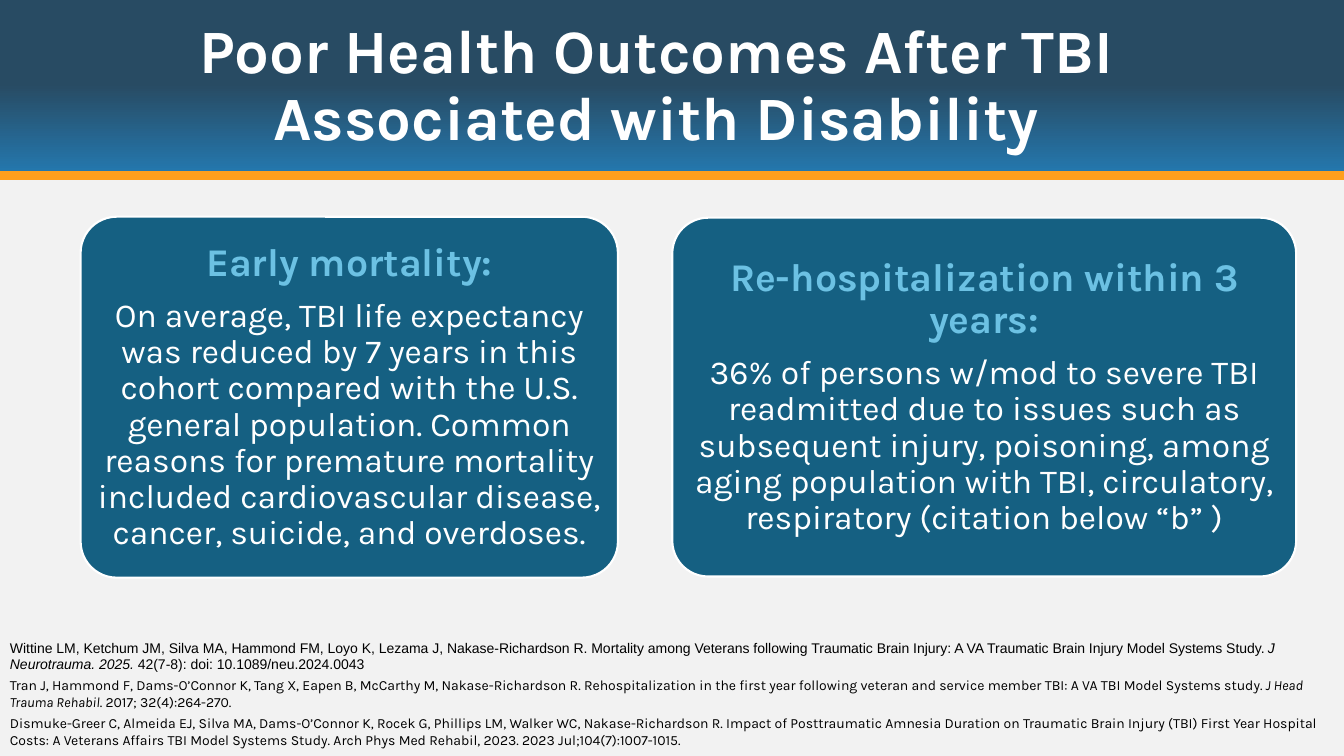
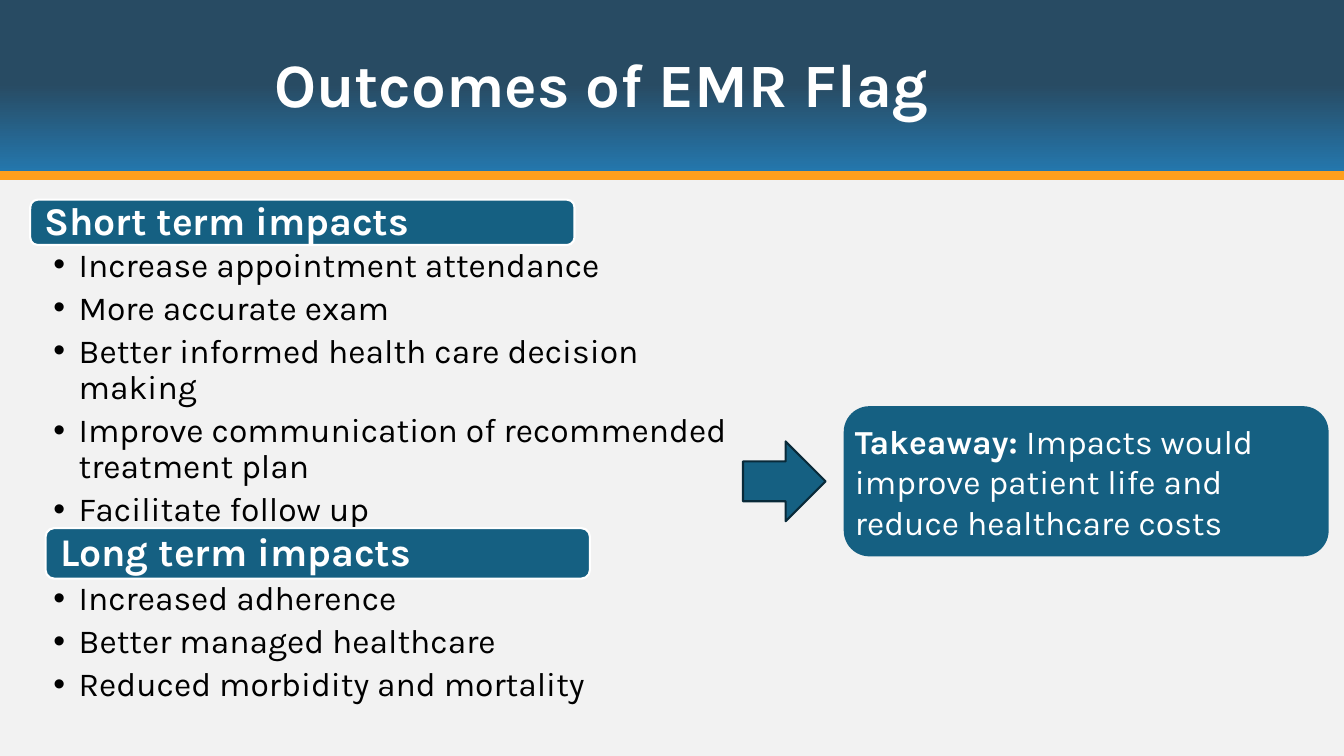
from dataclasses import dataclass

import lxml.etree
import pptx
import pptx.dml.color
import pptx.enum.shapes
import pptx.enum.text
import pptx.oxml.ns
import pptx.util

Pt = pptx.util.Pt
Color = pptx.dml.color.RGBColor.from_string
Shape = pptx.enum.shapes.MSO_SHAPE
Align = pptx.enum.text.PP_ALIGN
Anchor = pptx.enum.text.MSO_ANCHOR
qn = pptx.oxml.ns.qn


@dataclass(frozen=True)
class Theme:
    """Colours, fonts and sizes that the slides share."""
    width: float = 960
    height: float = 540
    band_height: float = 125.3
    rule_weight: float = 6
    outline: float = 1.5
    line_spacing: float = 0.9
    font: str = "Karla"
    plain_font: str = "Arial"
    title_size: float = 44
    heading_size: float = 28
    body_size: float = 24
    reference_size: float = 10
    paper = Color("F2F2F2")
    band_top = Color("284B63")
    band_bottom = Color("2479B0")
    rule = Color("FF9F1C")
    panel = Color("156082")
    panel_heading = Color("6CC1E3")
    arrow_edge = Color("092A39")
    light = Color("FFFFFF")
    dark = Color("000000")


THEME = Theme()

CARDS = [
    ((57.6, 154.8, 383.8, 257.8), "Early mortality:",
     "On average, TBI life expectancy was reduced by 7 years in this cohort compared "
     "with the U.S. general population. Common reasons for premature mortality included "
     "cardiovascular disease, cancer, suicide, and overdoses."),
    ((480.2, 155.5, 445.7, 256.3), "Re-hospitalization within 3 years:",
     "36% of persons w/mod to severe TBI readmitted due to issues such as subsequent "
     "injury, poisoning, among aging population with TBI, circulatory, respiratory "
     "(citation below “b” )"),
]

REFERENCES = [
    (THEME.plain_font, [
        ("Wittine LM, Ketchum JM, Silva MA, Hammond FM, Loyo K, Lezama J, "
         "Nakase-Richardson R. Mortality among Veterans following Traumatic Brain Injury: "
         "A VA Traumatic Brain Injury Model Systems Study. ", {}),
        ("J Neurotrauma. 2025. ", {"italic": True}),
        ("42(7-8): doi: 10.1089/neu.2024.0043", {})]),
    (THEME.font, [
        ("Tran J, Hammond F, Dams-O’Connor K, Tang X, Eapen B, McCarthy M, "
         "Nakase-Richardson R. Rehospitalization in the first year following veteran and "
         "service member TBI: A VA TBI Model Systems study. ", {}),
        ("J Head Trauma Rehabil", {"italic": True}),
        (". 2017; 32(4):264-270.", {})]),
    (THEME.font, [
        ("Dismuke-Greer C, Almeida EJ, Silva MA, Dams-O’Connor K, Rocek G, Phillips LM, "
         "Walker WC, Nakase-Richardson R. Impact of Posttraumatic Amnesia Duration on "
         "Traumatic Brain Injury (TBI) First Year Hospital Costs: A Veterans Affairs TBI "
         "Model Systems Study. Arch Phys Med Rehabil, 2023. 2023 Jul;104(7):1007-1015.", {})]),
]

SHORT_TERM = ["Increase appointment attendance", "More accurate exam",
              "Better informed health care decision making",
              "Improve communication of recommended treatment plan", "Facilitate follow up"]
LONG_TERM = ["Increased adherence", "Better managed healthcare",
             "Reduced morbidity and mortality"]


def points(box):
    """Turn a (left, top, width, height) box into point lengths."""
    return [Pt(length) for length in box]


def set_frame(shape, insets, anchor):
    """Wrap the text of a shape and set its (horizontal, vertical) insets and anchor."""
    frame = shape.text_frame
    frame.word_wrap = True
    frame.margin_left = frame.margin_right = Pt(insets[0])
    frame.margin_top = frame.margin_bottom = Pt(insets[1])
    frame.vertical_anchor = anchor
    return frame


def add_text(page, box, insets=(7.2, 3.6), anchor=Anchor.TOP):
    """Add a text box and return its frame."""
    return set_frame(page.shapes.add_textbox(*points(box)), insets, anchor)


def add_panel(page, kind, box, edge):
    """Add a filled shape in the panel colour."""
    panel = page.shapes.add_shape(kind, *points(box))
    panel.shadow.inherit = False
    panel.fill.solid()
    panel.fill.fore_color.rgb = THEME.panel
    panel.line.color.rgb = edge
    panel.line.width = Pt(THEME.outline)
    return panel


def next_paragraph(frame, index):
    """Return the first paragraph of a frame or append another."""
    return frame.add_paragraph() if index else frame.paragraphs[0]


def write(para, spans, size, color, bold=False, align=Align.LEFT,
          spacing=THEME.line_spacing, font=THEME.font):
    """Write spans of (text, own font settings) in one paragraph style."""
    para.alignment = align
    para.line_spacing = spacing
    para.font.name = font
    para.font.size = Pt(size)
    para.font.bold = bold
    para.font.color.rgb = color
    for text, settings in spans:
        span = para.add_run()
        span.text = text
        for name, value in settings.items():
            setattr(span.font, name, value)


def add_bullet(para, indent):
    """Give a paragraph a hanging round bullet."""
    properties = para._p.get_or_add_pPr()
    properties.set("marL", str(Pt(indent)))
    properties.set("indent", str(-Pt(indent)))
    lxml.etree.SubElement(properties, qn("a:buFont"), typeface=THEME.plain_font)
    lxml.etree.SubElement(properties, qn("a:buChar"), char="•")


def add_page(deck, title, title_box):
    """Add a slide with the title band and its rule."""
    page = deck.slides.add_slide(deck.slide_layouts[6])
    page.background.fill.solid()
    page.background.fill.fore_color.rgb = THEME.paper

    band = add_panel(page, Shape.RECTANGLE, (0, 0, THEME.width, THEME.band_height), THEME.panel)
    band.line.fill.background()
    band.fill.gradient()
    band.fill.gradient_angle = 270
    stops = [(0.48, THEME.band_top), (1, THEME.band_bottom)]
    for stop, (position, color) in zip(band.fill.gradient_stops, stops):
        stop.position = position
        stop.color.rgb = color

    rule = page.shapes.add_connector(
        pptx.enum.shapes.MSO_CONNECTOR.STRAIGHT,
        *points((0, THEME.band_height, THEME.width, THEME.band_height)))
    rule.line.color.rgb = THEME.rule
    rule.line.width = Pt(THEME.rule_weight)
    lxml.etree.SubElement(rule._element.spPr, qn("a:effectLst"))

    frame = add_text(page, title_box, anchor=Anchor.MIDDLE)
    write(frame.paragraphs[0], [(title, {})], THEME.title_size, THEME.light, True, Align.CENTER)
    return page


def add_card(page, box, heading, body):
    """Add a rounded card with a heading over centred text."""
    card = add_panel(page, Shape.ROUNDED_RECTANGLE, box, THEME.light)
    card.adjustments[0] = 0.1
    frame = set_frame(card, (4.3, 2.9), Anchor.MIDDLE)
    write(frame.paragraphs[0], [(heading, {})], THEME.heading_size, THEME.panel_heading,
          True, Align.CENTER)
    frame.paragraphs[0].space_after = Pt(0.35 * THEME.heading_size)
    write(frame.add_paragraph(), [(body, {})], THEME.body_size, THEME.light,
          align=Align.CENTER)


def add_references(page, box):
    """Add the list of references."""
    frame = add_text(page, box)
    for index, (font, spans) in enumerate(REFERENCES):
        para = next_paragraph(frame, index)
        if index:
            para.space_before = Pt(0.3 * THEME.reference_size)
        write(para, spans, THEME.reference_size, THEME.dark, spacing=1.0, font=font)


def add_section(page, box, bar_shift, bar_height, heading, items):
    """Add a heading bar with a bulleted list directly below it."""
    left, top, width, height = box
    bar = add_panel(page, Shape.ROUNDED_RECTANGLE,
                    (left + bar_shift, top, 388.8, bar_height), THEME.light)
    bar_frame = set_frame(bar, (8.6, 0), Anchor.MIDDLE)
    write(bar_frame.paragraphs[0], [(heading, {})], THEME.heading_size, THEME.light, True)

    frame = add_text(page, (left, top + bar_height, width, height - bar_height), (16.6, 2.2))
    frame.margin_right = Pt(13.7)
    for index, item in enumerate(items):
        para = next_paragraph(frame, index)
        add_bullet(para, 18)
        para.space_after = Pt(0.2 * THEME.body_size)
        write(para, [(item, {})], THEME.body_size, THEME.dark)


def add_takeaway(page, box):
    """Add an arrow that leads to the takeaway panel."""
    left, top, width, height = box
    arrow_width, arrow_height = 59, 57
    arrow_left = left - 72.7
    arrow_top = top + (height - arrow_height) / 2
    add_panel(page, Shape.RIGHT_ARROW, (arrow_left, arrow_top, arrow_width, arrow_height),
              THEME.arrow_edge)
    panel = add_panel(page, Shape.ROUNDED_RECTANGLE, box, THEME.panel)
    frame = set_frame(panel, (2.1, 0), Anchor.MIDDLE)
    spans = [("Takeaway: ", {"bold": True}),
             ("Impacts would improve patient life and reduce healthcare costs", {})]
    write(frame.paragraphs[0], spans, THEME.body_size, THEME.light, spacing=1.0)


def build_health_outcomes(deck):
    """Build the slide on poor health outcomes."""
    page = add_page(deck, "Poor Health Outcomes After TBI Associated with Disability",
                    (21.6, 10, 895, 104.4))
    for box, heading, body in CARDS:
        add_card(page, box, heading, body)
    add_references(page, (0, 452.9, THEME.width, 87.1))


def build_flag_outcomes(deck):
    """Build the slide on the outcomes of the flag."""
    page = add_page(deck, "Outcomes of EMR Flag", (21.6, 10, 816, 104.4))
    add_section(page, (21.6, 142.6, 513.4, 234.7), 0, 32.4, "Short term impacts", SHORT_TERM)
    add_section(page, (21.6, 377.3, 513.4, 139.7), 11, 36, "Long term impacts", LONG_TERM)
    add_takeaway(page, (603.4, 290.9, 344.9, 105.8))


def main():
    """Build and save the deck."""
    deck = pptx.Presentation()
    deck.slide_width = Pt(THEME.width)
    deck.slide_height = Pt(THEME.height)
    build_health_outcomes(deck)
    build_flag_outcomes(deck)
    deck.save("out.pptx")


if __name__ == "__main__":
    main()
